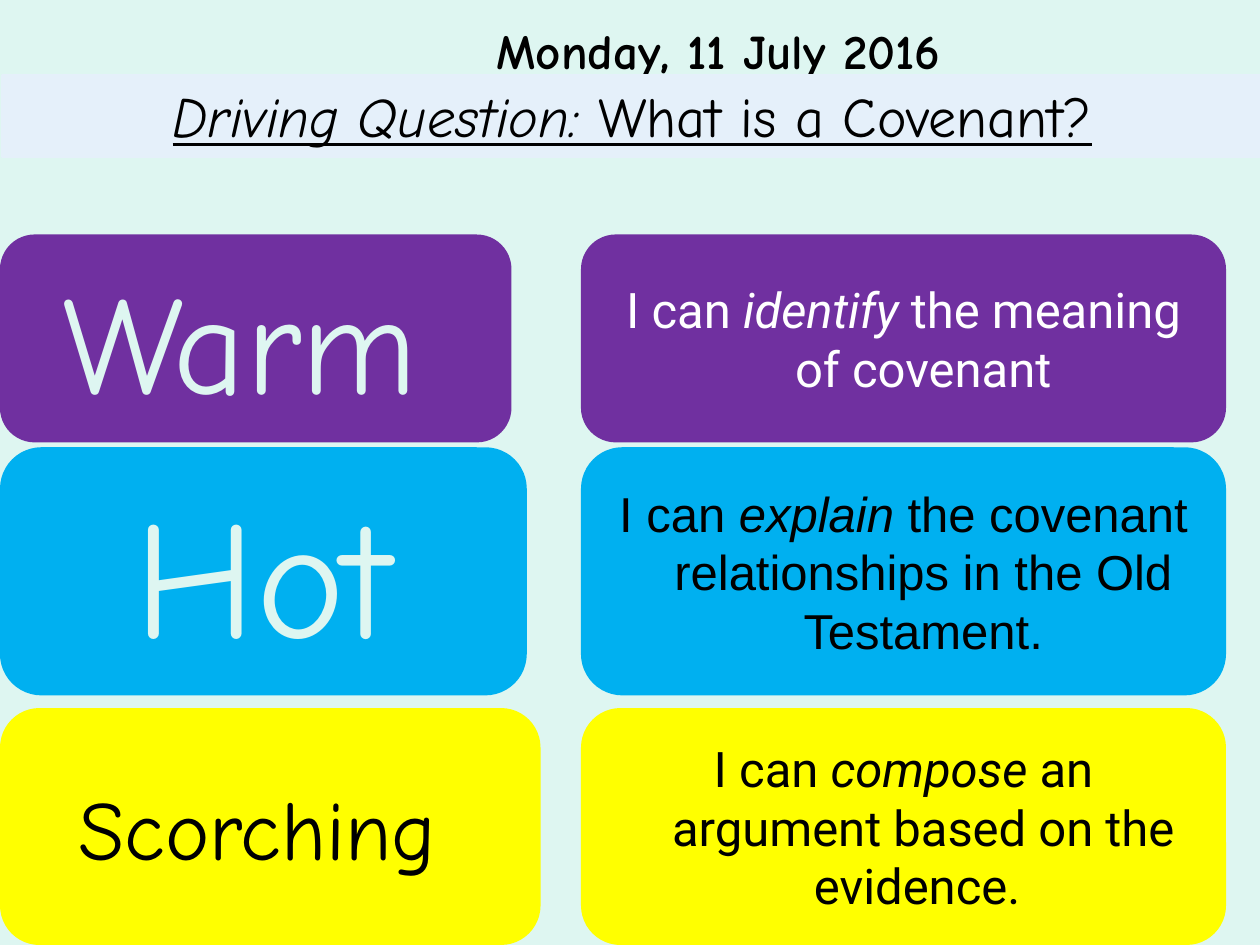
from pptx import Presentation
from pptx.dml.color import RGBColor
from pptx.enum.shapes import MSO_SHAPE as Shape
from pptx.enum.text import MSO_ANCHOR as Anchor, MSO_AUTO_SIZE as AutoSize, PP_ALIGN as Align
from pptx.util import Pt

MINT, BLACK, WHITE = "DEF6F1", "000000", "FFFFFF"
PURPLE, BLUE, YELLOW = "7030A0", "00B0F0", "FFFF00"
PALE_BLUE = "E5F0FA"
HEADING_FONT = "Comic Neue"
GOAL_LEFT, GOAL_WIDTH = 332, 368.6
HANGING = 22.5

# top, height, fill, level width, level runs (text, size), level colour,
# goal runs (text, italic), goal font, goal colour
LEVELS = [
    (134, 118.8, PURPLE, 292.3, [("Warm", 80), (" ", 54)], MINT,
     [("I can ", False), ("identify", True), (" the meaning of covenant", False)],
     "Roboto", WHITE),
    (255.6, 141.8, BLUE, 301, [("Hot", 96)], MINT,
     [("I can ", False), ("explain", True),
      (" the covenant relationships in the Old Testament.", False)],
     "Arial", BLACK),
    (404.6, 135.4, YELLOW, 308.9, [("Scorching", 48), (" ", 44)], BLACK,
     [("I can ", False), ("compose", True),
      (" an argument based on the evidence. ", False)],
     "Roboto", BLACK),
]


def rgb(hex_colour):
    return RGBColor.from_string(hex_colour)


def style(paragraph, font_name, colour, size=None, align=Align.CENTER):
    paragraph.alignment = align
    font = paragraph.font
    font.name = font_name
    font.color.rgb = rgb(colour)
    if size:
        font.size = Pt(size)


def add_run(paragraph, text):
    run = paragraph.add_run()
    run.text = text
    return run.font


def add_panel(slide, kind, left, top, width, height, fill):
    """Add a filled, unlined shape that wraps its text."""
    panel = slide.shapes.add_shape(kind, Pt(left), Pt(top), Pt(width), Pt(height))
    panel.shadow.inherit = False
    panel.fill.solid()
    panel.fill.fore_color.rgb = rgb(fill)
    panel.line.fill.background()
    panel.text_frame.word_wrap = True
    panel.text_frame.vertical_anchor = Anchor.MIDDLE
    return panel


def add_date(slide):
    date = slide.shapes.title
    date.left, date.top, date.width, date.height = Pt(276.5), Pt(14.4), Pt(478.8), Pt(28.8)
    frame = date.text_frame
    frame.text = "Monday, 11 July 2016"
    frame.auto_size = AutoSize.NONE
    frame.vertical_anchor = Anchor.MIDDLE
    style(frame.paragraphs[0], HEADING_FONT, BLACK, 28, Align.LEFT)
    frame.paragraphs[0].font.bold = True


def add_question(slide):
    banner = add_panel(slide, Shape.RECTANGLE, 1.4, 43.2, 720, 46.1, PALE_BLUE)
    banner.line.color.rgb = rgb(PALE_BLUE)
    banner.line.width = Pt(2)
    banner.text_frame.vertical_anchor = Anchor.TOP
    question = banner.text_frame.paragraphs[0]
    style(question, HEADING_FONT, BLACK, 32)
    for text, italic in [("Driving Question: ", True), ("What is a Covenant?", False)]:
        font = add_run(question, text)
        font.italic = italic
        font.underline = True


def add_goal(slide, top, height, fill, runs, font_name, colour):
    card = add_panel(slide, Shape.ROUNDED_RECTANGLE, GOAL_LEFT, top, GOAL_WIDTH, height, fill)
    goal = card.text_frame.paragraphs[0]
    style(goal, font_name, colour, 28)
    properties = goal._p.get_or_add_pPr()
    properties.set("marL", str(Pt(HANGING)))
    properties.set("indent", str(Pt(-HANGING)))
    for text, italic in runs:
        add_run(goal, text).italic = italic


def add_level(slide, top, width, height, fill, runs, colour):
    card = add_panel(slide, Shape.ROUNDED_RECTANGLE, 0, top, width, height, fill)
    level = card.text_frame.paragraphs[0]
    style(level, HEADING_FONT, colour)
    for text, size in runs:
        add_run(level, text).size = Pt(size)


def main():
    prs = Presentation()
    prs.slide_width, prs.slide_height = Pt(720), Pt(540)
    slide = prs.slides.add_slide(prs.slide_layouts[5])
    slide.background.fill.solid()
    slide.background.fill.fore_color.rgb = rgb(MINT)

    add_date(slide)
    for (top, height, fill, width, level_runs, level_colour,
         goal_runs, goal_font, goal_colour) in LEVELS:
        add_goal(slide, top, height, fill, goal_runs, goal_font, goal_colour)
        add_level(slide, top, width, height, fill, level_runs, level_colour)
    add_question(slide)
    prs.save("out.pptx")


if __name__ == "__main__":
    main()
